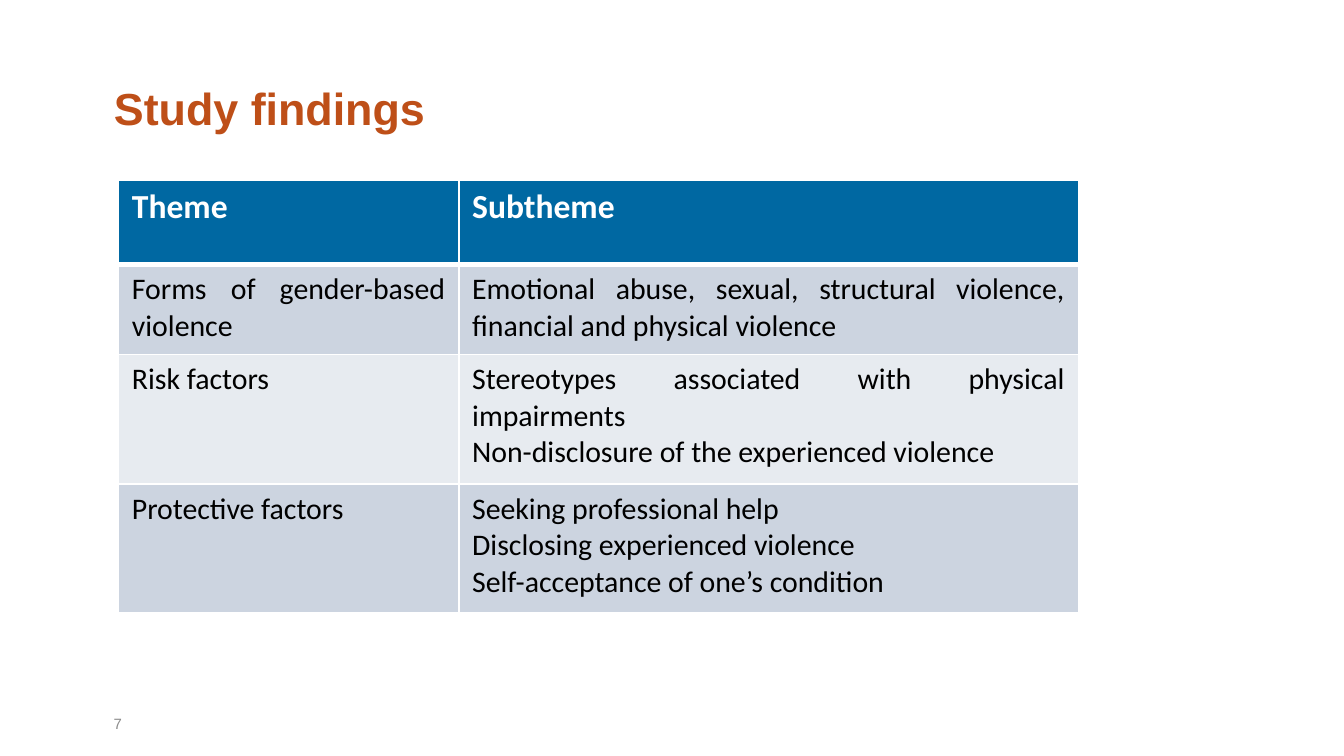
from lxml import etree
from pptx import Presentation
from pptx.dml.color import RGBColor
from pptx.enum.text import MSO_ANCHOR, PP_ALIGN
from pptx.oxml.ns import qn
from pptx.util import Cm, Pt

MIDDLE = MSO_ANCHOR.MIDDLE
LEFT, JUSTIFY = PP_ALIGN.LEFT, PP_ALIGN.JUSTIFY

HEX = {
    "title": "BE4F18",
    "head": "0068A2",
    "dark": "CCD4E0",
    "light": "E7EBF0",
    "white": "FFFFFF",
    "black": "000000",
    "grey": "8C8C8C",
}
TITLE = {"name": "Arial", "size": Pt(24), "bold": True}
PAGE = {"name": "Arial", "size": Pt(8), "bold": False}
HEAD = {"name": "Calibri", "size": Pt(18), "bold": True}
BODY = {"name": "Calibri", "size": Pt(16), "bold": False}

COLS = [6.43, 11.71]
ROWS = [1.6, 1.7, 2.44, 2.44]
CELLS = [
    ["Theme", "Subtheme"],
    ["Forms of gender-based violence",
     "Emotional abuse, sexual, structural violence, financial and physical violence"],
    ["Risk factors",
     "Stereotypes associated with physical impairments\n"
     "Non-disclosure of the experienced violence"],
    ["Protective factors",
     "Seeking professional help\nDisclosing experienced violence\n"
     "Self-acceptance of one’s condition"],
]


def write(frame, text, look, tint, align):
    """Fill a text frame and format each of its paragraphs."""
    frame.text = text
    frame.word_wrap = True
    for para in frame.paragraphs:
        para.alignment = align
        for key, value in look.items():
            setattr(para.font, key, value)
        para.font.color.rgb = RGBColor.from_string(HEX[tint])


def edge(cell, row):
    """Draw white cell borders, thick below the header row."""
    props = cell._tc.get_or_add_tcPr()
    thick = {(0, "B"), (1, "T")}
    for side in "LRTB":
        width = Pt(3 if (row, side) in thick else 1)
        line = etree.SubElement(props, qn(f"a:ln{side}"), w=str(width))
        fill = etree.SubElement(line, qn("a:solidFill"))
        etree.SubElement(fill, qn("a:srgbClr"), val=HEX["white"])


def add_title(slide, box):
    """Place and format the title."""
    shape = slide.shapes.title
    shape.left, shape.top, shape.width, shape.height = box
    write(shape.text_frame, "Study findings", TITLE, "title", JUSTIFY)
    shape.text_frame.vertical_anchor = MIDDLE


def add_grid(slide, box):
    """Place the table of themes and subthemes."""
    grid = slide.shapes.add_table(len(ROWS), len(COLS), *box).table
    for col, width in zip(grid.columns, COLS):
        col.width = Cm(width)
    for row, height in enumerate(ROWS):
        grid.rows[row].height = Cm(height)
        band = "dark" if row % 2 else "light"
        look, tint, back = (BODY, "black", band) if row else (HEAD, "white", "head")
        for col, text in enumerate(CELLS[row]):
            cell = grid.cell(row, col)
            edge(cell, row)
            cell.fill.solid()
            cell.fill.fore_color.rgb = RGBColor.from_string(HEX[back])
            write(cell.text_frame, text, look, tint, JUSTIFY)


def add_page(slide, box):
    """Place the page number."""
    frame = slide.shapes.add_textbox(*box).text_frame
    write(frame, "7", PAGE, "grey", LEFT)
    frame.vertical_anchor = MIDDLE


def main():
    """Build the slide and save it."""
    deck = Presentation()
    deck.slide_width, deck.slide_height = Cm(25.4), Cm(14.28)
    slide = deck.slides.add_slide(deck.slide_layouts[5])
    add_page(slide, (Cm(1.9), Cm(13.28), Cm(5.92), Cm(0.76)))
    add_title(slide, (Cm(1.9), Cm(0.64), Cm(20.9), Cm(2.77)))
    add_grid(slide, (Cm(2.24), Cm(3.4), Cm(sum(COLS)), Cm(sum(ROWS))))
    deck.save("out.pptx")


if __name__ == "__main__":
    main()
